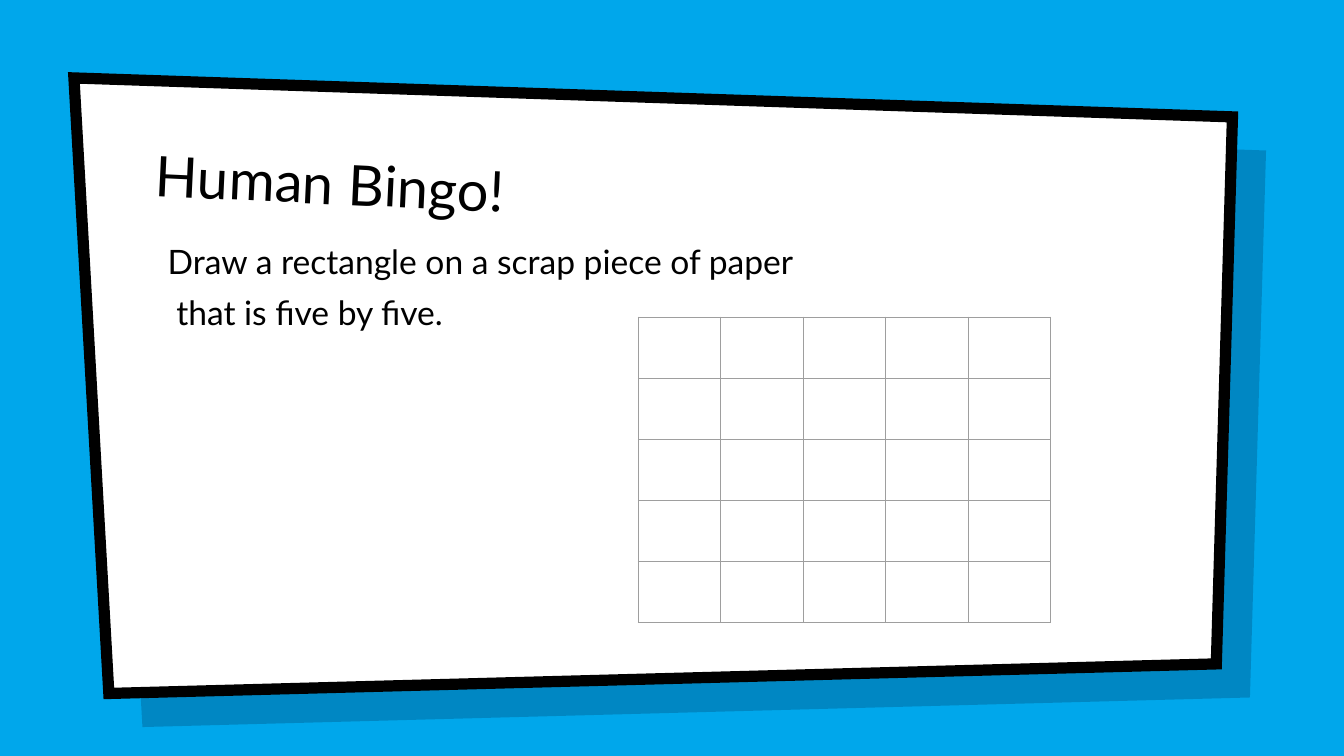
import pptx
import pptx.util
import pptx.dml.color
import pptx.enum.text
import pptx.oxml
import pptx.oxml.ns
from pptx.util import Inches

HUES = {"sky": "00A7EB", "shade": "001936", "card": "FFFFFF",
        "ink": "000000", "grid": "9E9E9E"}
SIZE = 5


def hue(name):
    return pptx.dml.color.RGBColor.from_string(HUES[name])


def add_text(box, lines, size, anchor):
    left, top, width, height = [Inches(n) for n in box]
    shape = slide.shapes.add_textbox(left, top, width, height)
    frame = shape.text_frame
    frame.word_wrap = True
    frame.vertical_anchor = anchor
    frame.margin_left = frame.margin_right = Inches(0.1)
    frame.margin_top = frame.margin_bottom = Inches(0.1)
    for i, line in enumerate(lines):
        para = frame.paragraphs[0] if i == 0 else frame.add_paragraph()
        para.text = line
        if i:
            para.space_before = pptx.util.Pt(6)
        para.font.name = "Lato"
        para.font.size = pptx.util.Pt(size)
        para.font.color.rgb = hue("ink")
    return shape


deck = pptx.Presentation()
deck.slide_width = Inches(10)
deck.slide_height = deck.slide_width * 9 // 16
slide = deck.slides.add_slide(deck.slide_layouts[6])
slide.background.fill.solid()
slide.background.fill.fore_color.rgb = hue("sky")

corners = [(0.55, 0.58), (9.17, 0.87), (9.05, 4.94), (0.81, 5.16)]
for name, shift in [("shade", 0.25), ("card", 0)]:
    points = [(Inches(x + shift), Inches(y + shift)) for x, y in corners]
    path = slide.shapes.build_freeform(*points[0])
    path.add_line_segments(points[1:], close=True)
    panel = path.convert_to_shape()
    panel.shadow.inherit = False
    panel.fill.solid()
    panel.fill.fore_color.rgb = hue(name)
    if name == "shade":
        panel.line.fill.background()
        tint = panel.fill._xPr.find(".//" + pptx.oxml.ns.qn("a:srgbClr"))
        alpha = tint.makeelement(pptx.oxml.ns.qn("a:alpha"), {"val": "22000"})
        tint.append(alpha)
    else:
        panel.line.color.rgb = hue("ink")
        panel.line.width = pptx.util.Pt(6)
        edge = panel.line._get_or_add_ln()
        edge.append(edge.makeelement(pptx.oxml.ns.qn("a:miter"), {"lim": "800000"}))

title = add_text((1.06, 0.99, 7.69, 0.83), ["Human Bingo!"], 30,
                 pptx.enum.text.MSO_ANCHOR.BOTTOM)
title.rotation = 2.7
add_text((1.15, 1.69, 8.43, 3.61),
         ["Draw a rectangle on a scrap piece of paper", " that is five by five."],
         18, pptx.enum.text.MSO_ANCHOR.TOP)

wide, high = Inches(3.07), Inches(2.27)
table = slide.shapes.add_table(SIZE, SIZE, Inches(4.75), Inches(2.36), wide, high).table
table.first_row = False
table.horz_banding = False
for col in table.columns:
    col.width = wide // SIZE
for row in table.rows:
    row.height = high // SIZE

space = pptx.oxml.ns.nsdecls("a")
for cell in table.iter_cells():
    cell.fill.background()
    props = cell._tc.get_or_add_tcPr()
    for i, side in enumerate(["lnL", "lnR", "lnT", "lnB"]):
        props.insert(i, pptx.oxml.parse_xml(
            f'<a:{side} {space} w="{pptx.util.Pt(0.75)}"><a:solidFill>'
            f'<a:srgbClr val="{HUES["grid"]}"/></a:solidFill></a:{side}>'))

deck.save("out.pptx")
